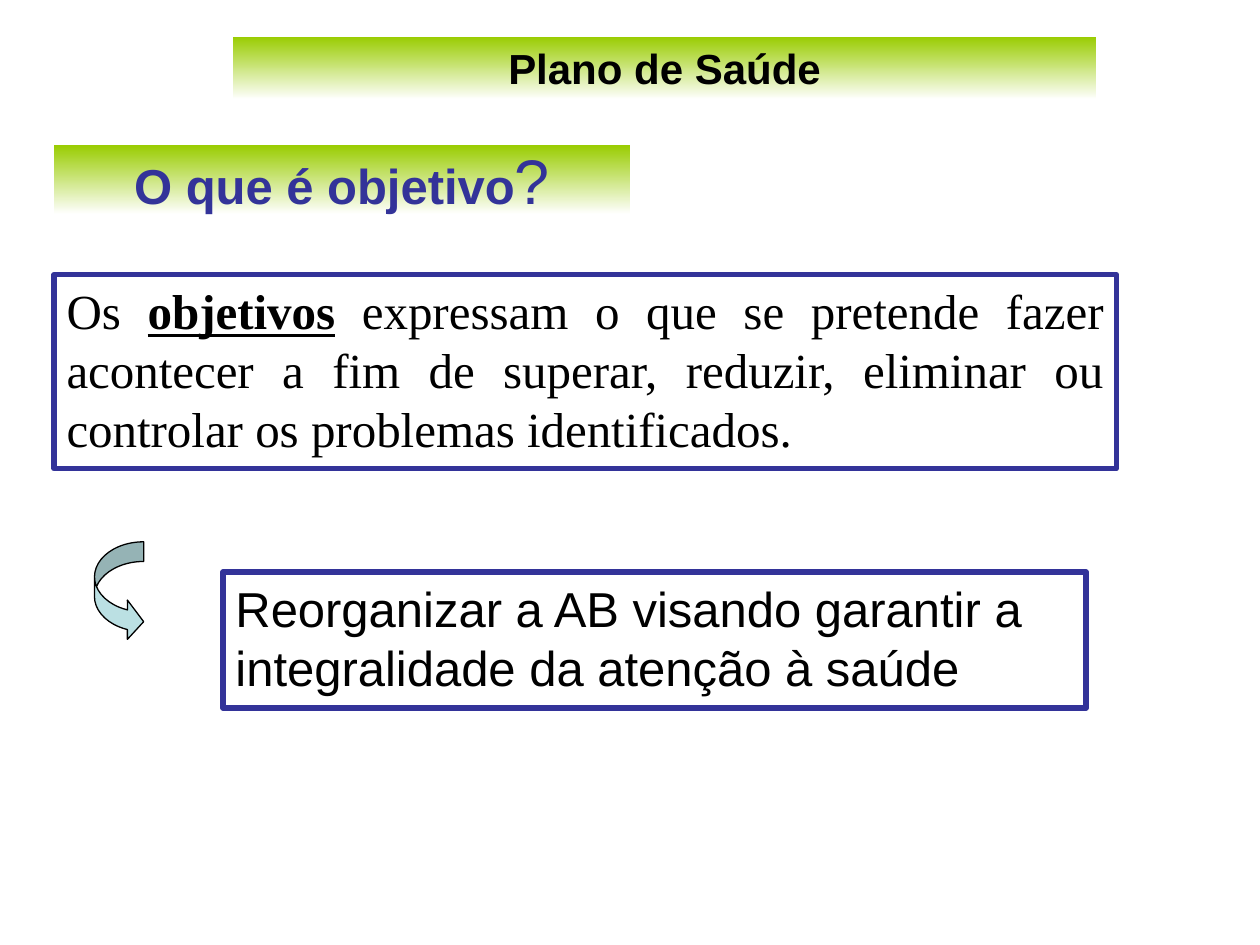
from dataclasses import dataclass

from pptx import Presentation
from pptx.dml.color import RGBColor
from pptx.enum.shapes import MSO_SHAPE
from pptx.enum.text import MSO_ANCHOR, MSO_AUTO_SIZE, PP_ALIGN
from pptx.util import Inches, Pt


@dataclass(frozen=True)
class Theme:
    green: RGBColor = RGBColor(0x99, 0xCC, 0x00)
    white: RGBColor = RGBColor(0xFF, 0xFF, 0xFF)
    indigo: RGBColor = RGBColor(0x33, 0x33, 0x99)
    aqua: RGBColor = RGBColor(0xBB, 0xE0, 0xE3)
    black: RGBColor = RGBColor(0x00, 0x00, 0x00)
    sans: str = "Arial"
    serif: str = "Times New Roman"
    banner: Pt = Pt(24)
    body: Pt = Pt(28)
    question_mark: Pt = Pt(36)
    frame: Pt = Pt(3)
    outline: Pt = Pt(0.75)


THEME = Theme()


def apply(target, formats):
    for attribute, value in formats.items():
        setattr(target, attribute, value)


def place(region, box):
    apply(region, dict(zip(("left", "top", "width", "height"), map(Inches, box))))


def add_preset(slide, preset, box):
    preset_shape = slide.shapes.add_shape(preset, *map(Inches, box))
    preset_shape.shadow.inherit = False
    return preset_shape


def write(region, runs, color, align, anchor=MSO_ANCHOR.TOP):
    frame = region.text_frame
    apply(frame, {"word_wrap": True, "auto_size": MSO_AUTO_SIZE.NONE,
                  "vertical_anchor": anchor})
    paragraph = frame.paragraphs[0]
    paragraph.alignment = align
    for wording, formats in runs:
        run = paragraph.add_run()
        run.text = wording
        run.font.color.rgb = color
        apply(run.font, formats)


def fade_to_white(region):
    region.fill.gradient()
    region.fill.gradient_angle = 270
    for stop, color in zip(region.fill.gradient_stops, (THEME.green, THEME.white)):
        stop.color.rgb = color


def draw_question(slide, box):
    question = slide.shapes.title
    place(question, box)
    fade_to_white(question)
    write(question, [
        ("O que é objetivo", {"name": THEME.sans, "size": THEME.body, "bold": True}),
        ("?", {"name": THEME.sans, "size": THEME.question_mark, "bold": False}),
    ], THEME.indigo, PP_ALIGN.CENTER, MSO_ANCHOR.MIDDLE)


def draw_statement(slide, box, runs, align):
    statement = add_preset(slide, MSO_SHAPE.RECTANGLE, box)
    statement.fill.background()
    statement.line.color.rgb = THEME.indigo
    statement.line.width = THEME.frame
    write(statement, runs, THEME.black, align)


def draw_arrow(slide, box):
    arrow = add_preset(slide, MSO_SHAPE.CURVED_RIGHT_ARROW, box)
    for index, ratio in enumerate((0.4, 0.8, 0.33)):
        arrow.adjustments[index] = ratio
    arrow.fill.solid()
    arrow.fill.fore_color.rgb = THEME.aqua
    arrow.line.color.rgb = THEME.black
    arrow.line.width = THEME.outline


def draw_banner(slide, box):
    banner = add_preset(slide, MSO_SHAPE.RECTANGLE, box)
    fade_to_white(banner)
    banner.line.fill.background()
    write(banner, [
        ("Plano de Saúde", {"name": THEME.sans, "size": THEME.banner, "bold": True}),
    ], THEME.black, PP_ALIGN.CENTER)


def main():
    deck = Presentation()
    apply(deck, {"slide_width": Inches(10), "slide_height": Inches(7.5)})
    slide = deck.slides.add_slide(deck.slide_layouts[5])
    serif = {"name": THEME.serif, "size": THEME.body}
    sans = {"name": THEME.sans, "size": THEME.body}

    draw_question(slide, (0.43, 1.15, 4.57, 0.55))
    draw_statement(slide, (0.43, 2.18, 8.43, 1.54), [
        ("Os ", serif),
        ("objetivos", {**serif, "bold": True, "underline": True}),
        (" expressam o que se pretende fazer acontecer a fim de superar, "
         "reduzir, eliminar ou controlar os problemas identificados.", serif),
    ], PP_ALIGN.JUSTIFY)
    draw_arrow(slide, (0.75, 4.3, 0.39, 0.79))
    draw_statement(slide, (1.77, 4.54, 6.85, 1.08), [
        ("Reorganizar a AB visando garantir a integralidade da atenção à saúde", sans),
    ], PP_ALIGN.LEFT)
    draw_banner(slide, (1.85, 0.29, 6.85, 0.5))

    deck.save("out.pptx")


if __name__ == "__main__":
    main()
